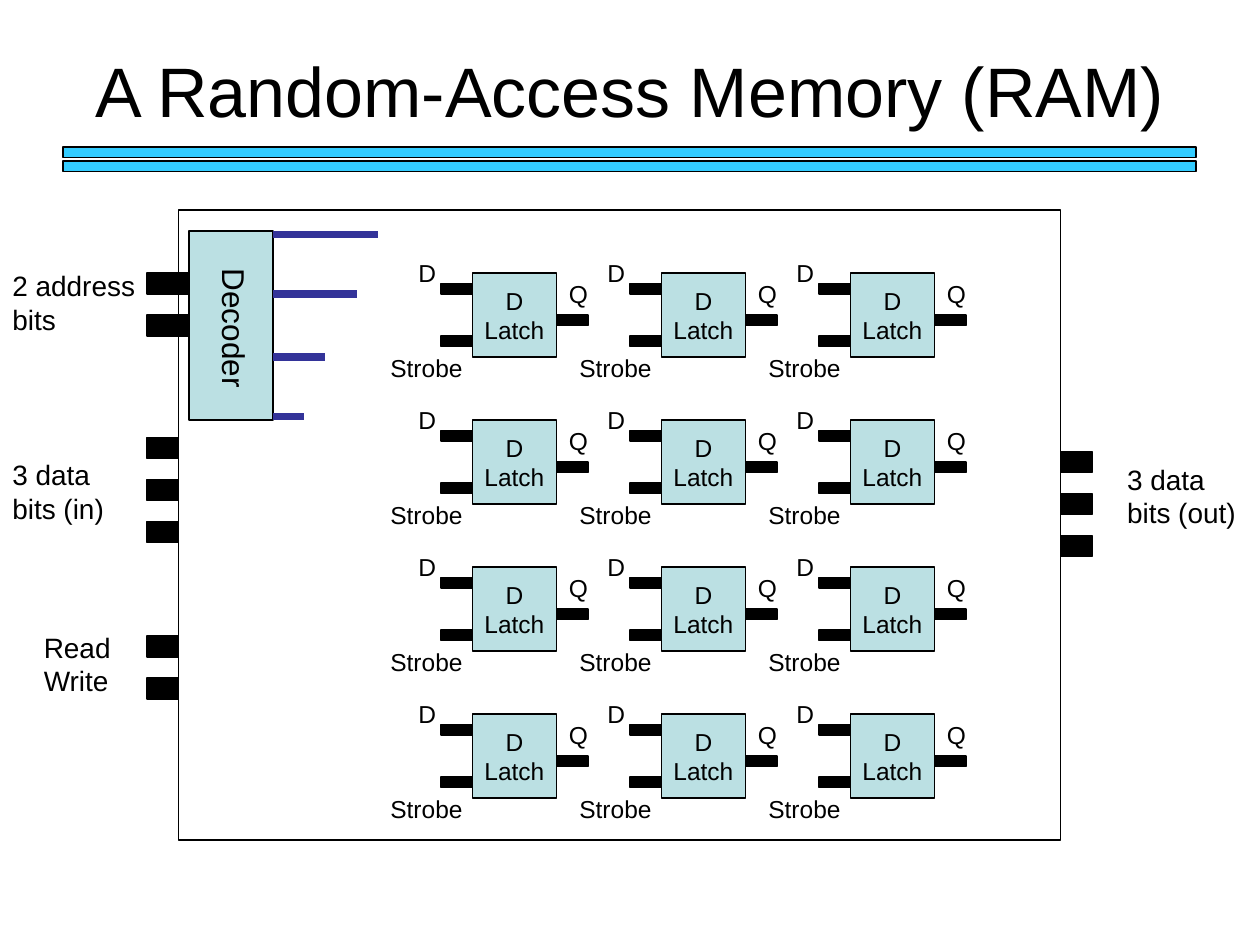
import dataclasses

import pptx
import pptx.dml.color
import pptx.enum.shapes
import pptx.enum.text
import pptx.oxml
import pptx.util
from pptx.oxml import ns

Pt = pptx.util.Pt
ALIGN = pptx.enum.text.PP_ALIGN
ANCHOR = pptx.enum.text.MSO_ANCHOR


@dataclasses.dataclass(frozen=True)
class Theme:
    font: str = "Arial"
    ink: str = "000000"
    bar: str = "33CCFF"
    block: str = "BBE0E3"
    wire: str = "333399"
    title: int = 40
    decoder: int = 18
    label: int = 16
    latch: int = 14
    outline: float = 0.75
    wire_width: float = 4.5


def rgb(value):
    return pptx.dml.color.RGBColor.from_string(value)


def apply(target, values):
    for name, value in values.items():
        setattr(target, name, value)


class Diagram:
    """Holds the theme and the slide, or group, being drawn on."""

    def __init__(self, slide, theme):
        self.slide = slide
        self.theme = theme
        self.shapes = slide.shapes

    def start_group(self):
        self.shapes = self.slide.shapes.add_group_shape().shapes

    def end_group(self):
        self.shapes = self.slide.shapes

    def fill_text(self, s, lines, size, align=ALIGN.LEFT, **frame):
        tf = s.text_frame
        apply(tf, frame)
        for i, line in enumerate(lines):
            p = tf.add_paragraph() if i else tf.paragraphs[0]
            p.alignment = align
            r = p.add_run()
            r.text = line
            apply(r.font, {"name": self.theme.font, "size": Pt(size)})
            r.font.color.rgb = rgb(self.theme.ink)

    def rect(self, x, y, w, h, fill=None):
        kind = pptx.enum.shapes.MSO_SHAPE.RECTANGLE
        s = self.shapes.add_shape(kind, Pt(x), Pt(y), Pt(w), Pt(h))
        s.shadow.inherit = False
        if fill:
            s.fill.solid()
            s.fill.fore_color.rgb = rgb(fill)
        else:
            s.fill.background()
        s.line.color.rgb = rgb(self.theme.ink)
        s.line.width = Pt(self.theme.outline)
        return s

    def text(self, x, y, w, h, lines, size, align=ALIGN.LEFT, **frame):
        s = self.shapes.add_textbox(Pt(x), Pt(y), Pt(w), Pt(h))
        self.fill_text(s, lines, size, align, **{"word_wrap": True, **frame})
        return s

    def pins(self, x, y, w, count):
        for i in range(count):
            self.rect(x, y + 24 * i, w, 12, self.theme.ink)

    def wire(self, x1, x2, y):
        straight = pptx.enum.shapes.MSO_CONNECTOR.STRAIGHT
        s = self.shapes.add_connector(straight, Pt(x1), Pt(y), Pt(x2), Pt(y))
        s.line.color.rgb = rgb(self.theme.wire)
        s.line.width = Pt(self.theme.wire_width)
        sp = s._element.spPr
        sp.append(pptx.oxml.parse_xml(f"<a:effectLst {ns.nsdecls('a')}/>"))

    def latch(self, x, y):
        size = self.theme.latch
        self.start_group()
        s = self.rect(x, y, 48, 48, self.theme.block)
        self.fill_text(s, ["D", "Latch"], size, ALIGN.CENTER,
                       word_wrap=False, vertical_anchor=ANCHOR.MIDDLE)
        for dx, dy in ((-18, 6), (48, 24), (-18, 36)):
            self.rect(x + dx, y + dy, 18, 6, self.theme.ink)
        for name, dx, dy, w in (("D", -38, -12, 14.4),
                                ("Strobe", -54, 42, 66),
                                ("Q", 48, 0, 14.4)):
            self.text(x + dx, y + dy, w, 24, [name], size, margin_right=0)
        self.end_group()

    def decoder(self, x, y, w, h):
        self.start_group()
        self.rect(x, y, w, h, self.theme.block)
        s = self.text(x - 17.5, y + 43.5, 87, 29, ["Decoder"],
                      self.theme.decoder)
        s.rotation = 90
        self.end_group()


def main():
    prs = pptx.Presentation()
    apply(prs, {"slide_width": Pt(720), "slide_height": Pt(540)})
    theme = Theme()
    d = Diagram(prs.slides.add_slide(prs.slide_layouts[6]), theme)

    # Title and double rule
    d.text(42, 6, 635.5, 90, ["A Random-Access Memory (RAM)"], theme.title,
           ALIGN.CENTER, vertical_anchor=ANCHOR.MIDDLE)
    d.start_group()
    for y in (84, 92):
        d.rect(36, y, 647.5, 6, theme.bar)
    d.end_group()

    # Memory outline with its outer pins and labels
    d.rect(102, 120, 504, 360)
    for x, y, w, count in ((84, 156, 24, 2), (84, 250, 18, 3),
                           (84, 363.5, 18, 2), (606, 258, 18, 3)):
        d.pins(x, y, w, count)
    for x, y, w, lines in ((0, 150, 89.5, ["2 address", "bits"]),
                           (0, 258, 67, ["3 data", "bits (in)"]),
                           (18, 356.5, 52.5, ["Read", "Write"]),
                           (637, 260.5, 77, ["3 data", "bits (out)"])):
        d.text(x, y, w, 46, lines, theme.label, word_wrap=False)

    # Four words of three latches
    for row in range(4):
        for col in range(3):
            d.latch(270 + 108 * col, 156 + 84 * row)

    # Decoder and its output wires
    d.decoder(108, 132, 48, 108)
    for end, y in ((216, 134), (204, 168), (186, 204), (174, 238)):
        d.wire(156, end, y)

    prs.save("out.pptx")


if __name__ == "__main__":
    main()
